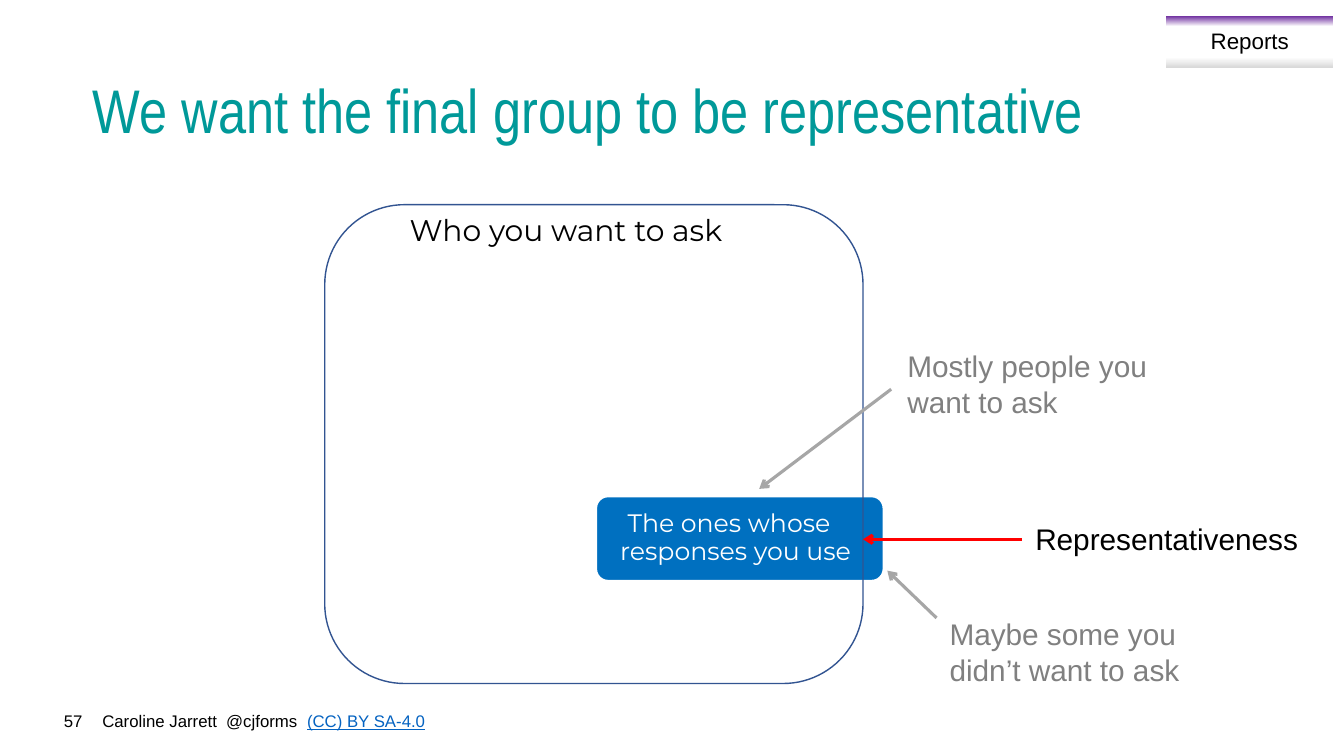
from lxml import etree
from pptx import Presentation
from pptx.dml.color import RGBColor
from pptx.enum import shapes, text
from pptx.oxml import ns
from pptx.util import Pt

COLORS = {
    "black": "000000", "white": "FFFFFF", "teal": "009999", "blue": "0070C0",
    "outline": "325491", "link": "0563C1", "red": "FF0000", "arrow": "A6A6A6",
    "grey": "808080", "purple": "7030A0", "silver": "D9D9D9",
}
CENTER, RIGHT = text.PP_ALIGN.CENTER, text.PP_ALIGN.RIGHT
TOP, MIDDLE = text.MSO_ANCHOR.TOP, text.MSO_ANCHOR.MIDDLE
HEADING = {"name": "Arial Narrow", "size": Pt(44), "color": "teal"}
FOOTER = {"name": "Arial", "size": Pt(12), "color": "black"}
TAB = {"name": "Arial", "size": Pt(16), "color": "black"}
GROUP_LABEL = {"name": "Montserrat", "size": Pt(21.3), "color": "black"}
SAMPLE_LABEL = {"name": "Montserrat", "size": Pt(18), "color": "white"}
KEY_NOTE = {"name": "Arial", "size": Pt(21.3), "color": "black"}
SIDE_NOTE = {**KEY_NOTE, "color": "grey"}


def rgb(name):
    return RGBColor.from_string(COLORS[name])


def add_run(paragraph, content, formats):
    run = paragraph.add_run()
    run.text = content
    for key, value in formats.items():
        if key == "color":
            run.font.color.rgb = rgb(value)
        else:
            setattr(run.font, key, value)


def write(shape, content, formats, anchor=TOP, **paragraph_formats):
    frame = shape.text_frame
    for key, value in {"word_wrap": True, "vertical_anchor": anchor}.items():
        setattr(frame, key, value)
    paragraph = frame.paragraphs[0]
    for key, value in paragraph_formats.items():
        setattr(paragraph, key, value)
    for index, line in enumerate(content.split("\n")):
        if index:
            paragraph.add_line_break()
        add_run(paragraph, line, formats)
    return paragraph


def add_label(parent, box, content, formats, anchor=TOP, **paragraph_formats):
    label = parent.shapes.add_textbox(*map(Pt, box))
    return write(label, content, formats, anchor, **paragraph_formats)


def add_panel(parent, kind, box, fill=None, line=None, width=0):
    panel = parent.shapes.add_shape(kind, *map(Pt, box))
    panel.shadow.inherit = False
    if fill:
        panel.fill.solid()
        panel.fill.fore_color.rgb = rgb(fill)
    else:
        panel.fill.background()
    if line:
        panel.line.color.rgb = rgb(line)
        panel.line.width = Pt(width)
    else:
        panel.line.fill.background()
    return panel


def add_arrow(slide, start, end, color):
    arrow = slide.shapes.add_connector(
        shapes.MSO_CONNECTOR.STRAIGHT, *map(Pt, (*start, *end)))
    arrow.line.color.rgb = rgb(color)
    arrow.line.width = Pt(2.25)
    properties = arrow.line._get_or_add_ln()
    etree.SubElement(properties, ns.qn("a:tailEnd"), type="arrow")
    etree.SubElement(arrow._element.spPr, ns.qn("a:effectLst"))


def add_title(slide, box):
    title = slide.shapes.title
    for key, value in zip(("left", "top", "width", "height"), box):
        setattr(title, key, Pt(value))
    write(title, "We want the final group to be representative", HEADING, MIDDLE,
          alignment=text.PP_ALIGN.LEFT, line_spacing=0.9)


def add_footer(slide, box):
    left, top, width, height = box
    number_width = 51
    add_label(slide, (left, top, number_width, height), "57", FOOTER, alignment=RIGHT)
    credit = add_label(slide, (left + number_width, top, width - number_width, height),
                       "Caroline Jarrett  @cjforms  ", FOOTER)
    add_run(credit, "(CC) BY SA-4.0", {**FOOTER, "color": "link", "underline": True})


def add_tab(slide, box):
    left, top, width, height = box
    group = slide.shapes.add_group_shape()
    panel = add_panel(group, shapes.MSO_SHAPE.RECTANGLE, box)
    panel.fill.gradient()
    panel.fill.gradient_angle = 270
    stops = panel._element.spPr.find(".//" + ns.qn("a:gsLst"))
    for stop in list(stops):
        stops.remove(stop)
    for percent, color in ((0, "purple"), (20, "white"), (80, "white"), (100, "silver")):
        stop = etree.SubElement(stops, ns.qn("a:gs"), pos=str(percent * 1000))
        etree.SubElement(stop, ns.qn("a:srgbClr"), val=COLORS[color])
    add_label(group, (left + 3.6, top + 4.3, width - 7.2, height - 10),
              "Reports", TAB, alignment=CENTER)


def add_diagram(slide, box):
    left, top, width, height = box

    def place(x, y, *size):
        return (left + x, top + y, *size)

    rounded = shapes.MSO_SHAPE.ROUNDED_RECTANGLE
    add_panel(slide, rounded, place(191.5, 206, 210, 65), "blue", "white", 6)
    centered = {"alignment": CENTER, "line_spacing": 0.9}
    add_label(slide, place(42, 4.3, 260.5, 30), "Who you want to ask",
              GROUP_LABEL, **centered)
    add_panel(slide, rounded, box, line="outline", width=1)
    add_label(slide, place(198, 215.3, 191, 47), "The ones whose  \nresponses you use",
              SAMPLE_LABEL, **centered)

    for start, end, color in (
        ((498, 239), (width, 239), "red"),
        ((404.6, 131.8), (310.3, 203), "arrow"),
        ((437, 295.2), (401.8, 261.4), "arrow"),
    ):
        add_arrow(slide, place(*start), place(*end), color)

    for x, y, content, formats in (
        (500.4, 206.6, "Representativeness", KEY_NOTE),
        (409, 95.8, "Mostly people you want to ask", SIDE_NOTE),
        (439.2, 287.3, "Maybe some you didn’t want to ask", SIDE_NOTE),
    ):
        add_label(slide, place(x, y, 223, 63.4), content, formats, MIDDLE)


def main():
    presentation = Presentation()
    presentation.slide_width, presentation.slide_height = Pt(960), Pt(540)
    slide = presentation.slides.add_slide(presentation.slide_layouts[5])
    add_footer(slide, (15, 504, 462, 21.6))
    add_title(slide, (59, 28.8, 835, 104.4))
    add_diagram(slide, (232, 146.2, 384.5, 342))
    add_tab(slide, (833, 11.5, 119.5, 36.7))
    presentation.save("out.pptx")


if __name__ == "__main__":
    main()
